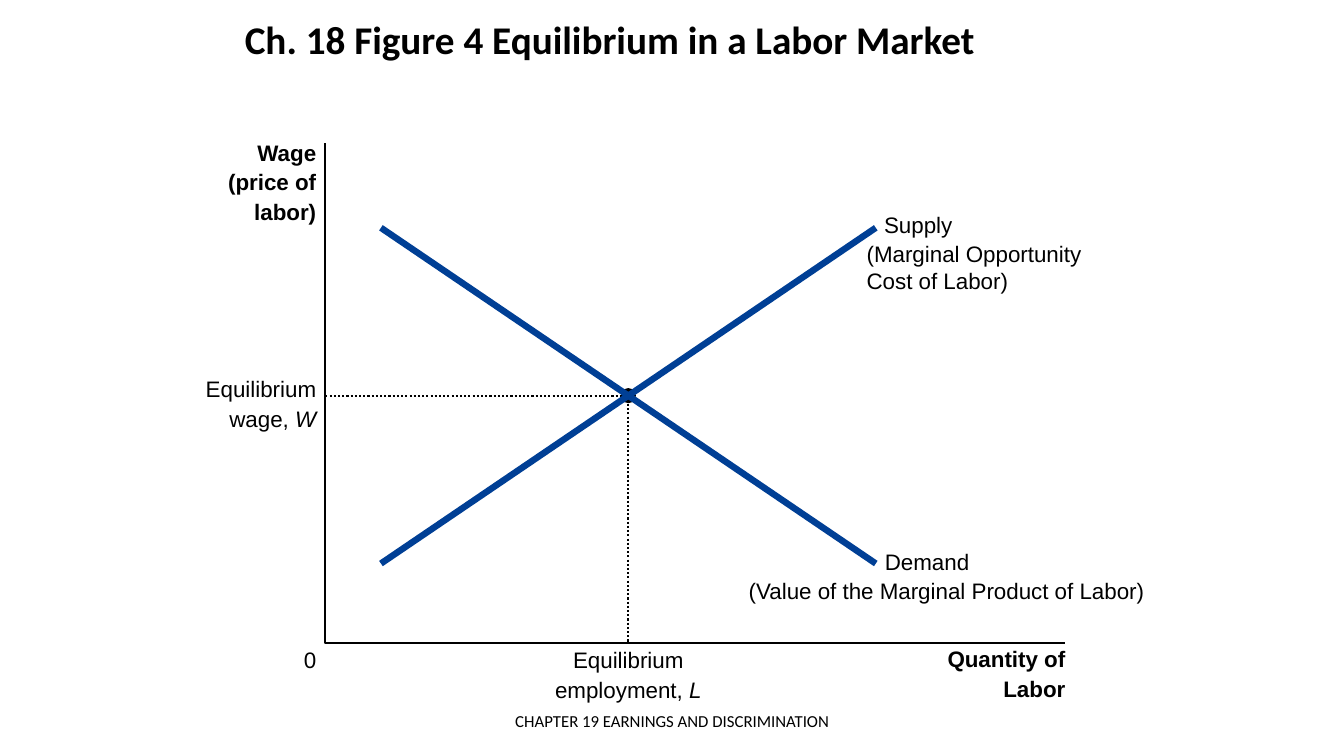
"""Build a slide showing supply and demand meeting in a labor market."""
from dataclasses import dataclass

import pptx
import pptx.dml.color
import pptx.enum.dml
import pptx.enum.shapes
import pptx.enum.text
import pptx.oxml.ns
import pptx.util
from lxml import etree

Cm = pptx.util.Cm
Pt = pptx.util.Pt
ALIGN = pptx.enum.text.PP_ALIGN
ANCHOR = pptx.enum.text.MSO_ANCHOR


@dataclass(frozen=True)
class Theme:
    ink: str = "000000"
    curve: str = "003F95"
    heading_font: str = "Calibri"
    label_font: str = "Arial"
    title_size: float = 28
    label_size: float = 16
    footer_size: float = 12
    thin: float = 1.5
    thick: float = 4.63


THEME = Theme()
AXIS_X, AXIS_TOP, AXIS_BASE, AXIS_RIGHT = 8.2, 3.61, 16.2, 26.85
LEFT, RIGHT, HIGH, LOW = 9.6, 22.07, 5.74, 14.2
EQ_X, EQ_Y = (LEFT + RIGHT) / 2, (HIGH + LOW) / 2
DOT = 0.38


def rgb(color):
    return pptx.dml.color.RGBColor.from_string(color)


def add_text(s, x, y, w, h, lines, align=ALIGN.LEFT, size=THEME.label_size,
             font=THEME.label_font, anchor=ANCHOR.TOP, spacing=None):
    """Add a text box; each line is a list of (text, style) runs, style being "", "b" or "i"."""
    tf = s.shapes.add_textbox(Cm(x), Cm(y), Cm(w), Cm(h)).text_frame
    tf.word_wrap = True
    tf.vertical_anchor = anchor
    tf.margin_left = tf.margin_right = tf.margin_top = tf.margin_bottom = 0
    for i, runs in enumerate(lines):
        p = tf.add_paragraph() if i else tf.paragraphs[0]
        p.alignment = align
        p.space_before = Pt(2 if i else 0)
        if spacing:
            p.line_spacing = spacing
        for text, style in runs:
            r = p.add_run()
            r.text = text
            r.font.name = font
            r.font.size = Pt(size)
            r.font.bold = style == "b"
            r.font.italic = style == "i"
            r.font.color.rgb = rgb(THEME.ink)


def add_path(s, points, dash=None):
    """Draw an open thin line through points."""
    (x, y), *rest = [(Cm(px), Cm(py)) for px, py in points]
    builder = s.shapes.build_freeform(x, y)
    builder.add_line_segments(rest, close=False)
    sp = builder.convert_to_shape()
    sp.shadow.inherit = False
    sp.fill.background()
    sp.line.color.rgb = rgb(THEME.ink)
    sp.line.width = Pt(THEME.thin)
    if dash:
        sp.line.dash_style = dash


def add_curve(s, y1, y2):
    """Draw a thick straight curve across the plot from height y1 to y2."""
    cxn = s.shapes.add_connector(pptx.enum.shapes.MSO_CONNECTOR.STRAIGHT,
                                 Cm(LEFT), Cm(y1), Cm(RIGHT), Cm(y2))
    cxn.line.color.rgb = rgb(THEME.curve)
    cxn.line.width = Pt(THEME.thick)
    etree.SubElement(cxn._element.spPr, pptx.oxml.ns.qn("a:effectLst"))


def add_dot(s, x, y):
    """Mark a point centred on x, y."""
    sp = s.shapes.add_shape(pptx.enum.shapes.MSO_SHAPE.OVAL, Cm(x - DOT / 2),
                            Cm(y - DOT / 2), Cm(DOT), Cm(DOT))
    sp.shadow.inherit = False
    sp.fill.solid()
    sp.fill.fore_color.rgb = rgb(THEME.ink)
    sp.line.fill.background()


def main():
    prs = pptx.Presentation()
    prs.slide_width, prs.slide_height = Cm(33.87), Cm(19.05)
    s = prs.slides.add_slide(prs.slide_layouts[6])

    add_text(s, 6.17, 0.15, 22.35, 1.9,
             [[("Ch. 18 Figure 4 Equilibrium in a Labor Market", "b")]],
             size=THEME.title_size, font=THEME.heading_font,
             anchor=ANCHOR.MIDDLE, spacing=0.8)
    add_text(s, 11.23, 17.65, 11.43, 1.02,
             [[("CHAPTER 19 EARNINGS AND DISCRIMINATION", "")]], ALIGN.CENTER,
             THEME.footer_size, THEME.heading_font, ANCHOR.MIDDLE)

    add_path(s, [(AXIS_X, AXIS_TOP), (AXIS_X, AXIS_BASE), (AXIS_RIGHT, AXIS_BASE)])
    add_dot(s, EQ_X, EQ_Y)
    add_path(s, [(AXIS_X, EQ_Y), (EQ_X, EQ_Y), (EQ_X, AXIS_BASE)],
             pptx.enum.dml.MSO_LINE.ROUND_DOT)
    add_curve(s, HIGH, LOW)
    add_curve(s, LOW, HIGH)

    labels = [
        (4.97, 3.5, 3, 2.13, ALIGN.RIGHT,
         [[("Wage", "b")], [("(price of", "b")], [("labor)", "b")]]),
        (4.97, 9.45, 3, 1.4, ALIGN.RIGHT,
         [[("Equilibrium", "")], [("wage, ", ""), ("W", "i")]]),
        (6.97, 16.28, 1, 0.68, ALIGN.RIGHT, [[("0", "")]]),
        (EQ_X - 2, 16.28, 4, 1.4, ALIGN.CENTER,
         [[("Equilibrium", "")], [("employment, ", ""), ("L", "i")]]),
        (AXIS_RIGHT - 4, 16.26, 4, 1.4, ALIGN.RIGHT,
         [[("Quantity of", "b")], [("Labor", "b")]]),
        (22.28, 5.31, 2, 0.68, ALIGN.LEFT, [[("Supply", "")]]),
        (21.84, 6.05, 5.84, 1.36, ALIGN.LEFT,
         [[("(Marginal Opportunity Cost of Labor)", "")]]),
        (22.3, 13.82, 2.5, 0.68, ALIGN.LEFT, [[("Demand", "")]]),
        (18.87, 14.53, 10.49, 0.68, ALIGN.LEFT,
         [[("(Value of the Marginal Product of Labor)", "")]]),
    ]
    for x, y, w, h, align, lines in labels:
        add_text(s, x, y, w, h, lines, align)

    prs.save("out.pptx")


if __name__ == "__main__":
    main()
